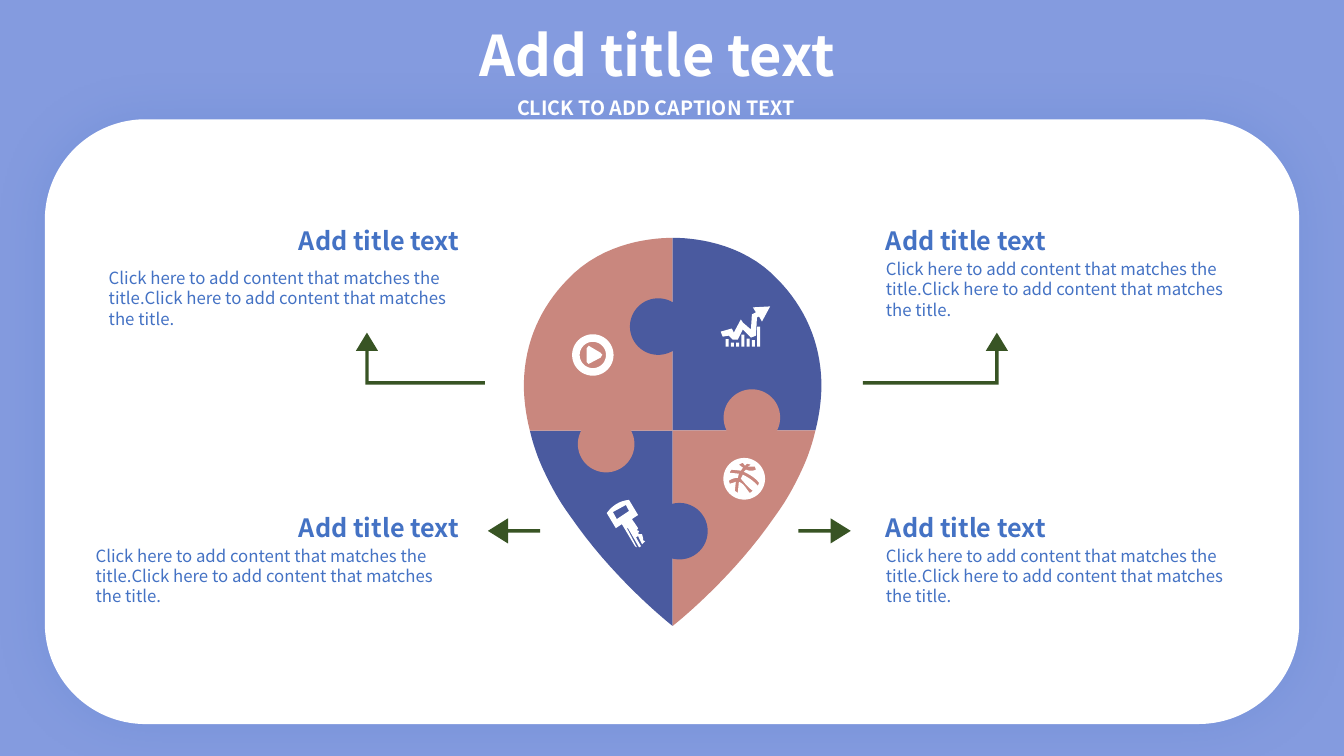
import math

from lxml import etree
from pptx import Presentation
from pptx.dml.color import RGBColor
from pptx.enum import shapes, text
from pptx.oxml import ns
from pptx.util import Pt

PERIWINKLE = RGBColor(0x84, 0x9B, 0xDF)
WHITE = RGBColor(0xFF, 0xFF, 0xFF)
BLUE = RGBColor(0x44, 0x72, 0xC4)
INDIGO = RGBColor(0x4A, 0x5A, 0x9F)
ROSE = RGBColor(0xC9, 0x87, 0x7E)
GREEN = RGBColor(0x38, 0x54, 0x24)
FONT = "Noto Sans CJK SC"
STEPS = 16


def draw_outline(contours, color):
    """Items: (x, y) point, (cx, cy, r, from, to) arc in degrees, six numbers a Bezier."""
    builder = None
    for contour in contours:
        points = []
        for item in contour:
            if len(item) == 2:
                points.append(item)
            elif len(item) == 5:
                cx, cy, r, first, last = item
                for i in range(3 * STEPS + 1):
                    angle = math.radians(first + (last - first) * i / (3 * STEPS))
                    points.append((cx + r * math.cos(angle), cy + r * math.sin(angle)))
            else:
                knots = [points[-1], item[:2], item[2:4], item[4:]]
                for i in range(1, STEPS + 1):
                    t = i / STEPS
                    weights = ((1 - t) ** 3, 3 * t * (1 - t) ** 2, 3 * t * t * (1 - t), t ** 3)
                    points.append(tuple(sum(w * k[axis] for w, k in zip(weights, knots))
                                        for axis in (0, 1)))
        points = [(Pt(x), Pt(y)) for x, y in points]
        if builder is None:
            builder = slide.shapes.build_freeform(*points[0], scale=1.0)
        else:
            builder.move_to(*points[0])
        builder.add_line_segments(points[1:], close=True)
    outline = builder.convert_to_shape()
    outline.shadow.inherit = False
    outline.fill.solid()
    outline.fill.fore_color.rgb = color
    outline.line.fill.background()


def set_text(box, words, size, color, bold, align=text.PP_ALIGN.LEFT):
    frame = box.text_frame
    frame.text = words
    frame.paragraphs[0].alignment = align
    font = frame.paragraphs[0].runs[0].font
    font.name, font.size, font.bold = FONT, Pt(size), bold
    font.color.rgb = color


prs = Presentation()
prs.slide_width, prs.slide_height = Pt(960), Pt(540)
slide = prs.slides.add_slide(prs.slide_layouts[5])
slide.background.fill.solid()
slide.background.fill.fore_color.rgb = PERIWINKLE

# White panel with a soft blue glow
panel = slide.shapes.add_shape(shapes.MSO_SHAPE.ROUNDED_RECTANGLE,
                               Pt(32), Pt(85.2), Pt(896), Pt(432))
panel.shadow.inherit = False
panel.fill.solid()
panel.fill.fore_color.rgb = WHITE
panel.line.fill.background()
effects = panel.fill._xPr.find(ns.qn("a:effectLst"))
glow = etree.SubElement(effects, ns.qn("a:outerShdw"), blurRad=str(Pt(37)), dist="0",
                        dir="0", algn="ctr", rotWithShape="0")
glow_color = etree.SubElement(glow, ns.qn("a:srgbClr"), val=str(BLUE))
etree.SubElement(glow_color, ns.qn("a:alpha"), val="22000")

# Bent arrows: tip, end of the line, direction of the line
for tip, end, side in ((262.1, 346.3, 1), (712.1, 616.3, -1)):
    draw_outline([[(tip + side * 1.2, 272.3), (tip + side * 1.2, 250.6),
                   (tip + side * 7.9, 250.6), (tip, 237.6), (tip - side * 7.9, 250.6),
                   (tip - side * 1.2, 250.6), (tip - side * 1.2, 274.7),
                   (end, 274.7), (end, 272.3)]], GREEN)

# Straight arrows: end of the line, tip, direction of the head
for end, tip, side in ((570.2, 607.7, 1), (385.9, 348.5, -1)):
    neck = tip - side * 14.4
    draw_outline([[(end, 378), (end, 380.4), (neck, 380.4), (neck, 388.2), (tip, 379.2),
                   (neck, 370.2), (neck, 378)]], GREEN)

# Puzzle pin: right-hand profile relative to the axis, mirrored for the left
AXIS, SEAM, KNOB = 480.5, 307.5, 20.2
UPPER = [(0, 169.9), (10.8, 169.9, 49, 171.4, 75.6, 200.2),
         (93.6, 218.9, 105.8, 243.4, 106.3, 274.3), (106.3, 285.1, 104.9, 295.9, 102, SEAM)]
LOWER = [(102, SEAM), (100, 316, 97, 325.5, 92.7, 334.8),
         (87.7, 345.6, 82, 356.4, 74.7, 366.5), (67.5, 376.6),
         (38.7, 416.2, 2, 445.7, 0, 447.1)]
center = (AXIS, SEAM)
for side, profile, seams, color in (
    (-1, LOWER, [center], INDIGO),
    (-1, UPPER, [(433, 317.2, KNOB, 208.7, -28.7), center], ROSE),
    (1, UPPER, [center, (470.2, 233.3, KNOB, 59.3, 300.7)], INDIGO),
    (1, LOWER, [center, (537.1, 298.3, KNOB, 152.9, 387.1)], ROSE),
):
    edge = [tuple(v if i % 2 else AXIS + side * v for i, v in enumerate(item))
            for item in profile]
    draw_outline([edge + seams], color)

lower_knob = slide.shapes.add_shape(shapes.MSO_SHAPE.OVAL, Pt(465.1), Pt(359.2),
                                    Pt(2 * KNOB), Pt(2 * KNOB))
lower_knob.shadow.inherit = False
lower_knob.fill.solid()
lower_knob.fill.fore_color.rgb = INDIGO
lower_knob.line.fill.background()

# Icons: play button, key, growth chart, ball
play = [[(423.5, 253.6, 14.8, 0, 360)], [(423.5, 253.6, 9.4, 0, 360)],
        [(419, 249), (420.5, 247), (429, 252), (430.3, 253.5), (429, 255.5),
         (420.5, 260), (419, 258.5)]]
key = [[(433.4, 366.5), (437.8, 360.7, 442.8, 357.8, 449.3, 357.1), (455.8, 367.9),
        (451.4, 370.8), (455.8, 377.3), (455, 378.7), (456.5, 379.4), (455.8, 380.9),
        (456.5, 381.6), (458.6, 381.6), (459.4, 384.5), (459.4, 385.9), (460.8, 386.6),
        (458.6, 388.8), (455.8, 383), (454.3, 383.8), (457.9, 390.2), (456.5, 391),
        (448.6, 377.3), (447.8, 377.3), (455, 391), (453.6, 390.2), (444.2, 374.4),
        (439.9, 377.3)],
       [(437.8, 365.8), (440.6, 370.8), (449.3, 365), (447.1, 360.7)]]
growth = [[(550.1, 218.9), (544.3, 229.7), (542.2, 226.1), (540.7, 226.8), (540, 239.8),
           (536.4, 241.2), (530.6, 235.4), (527, 242.6), (523.4, 242.6), (520.6, 239.8),
           (516.2, 240.5), (514.8, 236.9), (522.7, 234.7), (524.2, 237.6), (529.2, 228.2),
           (530.6, 230.4), (536.4, 235.4), (537.1, 224.6), (540, 223.2), (537.8, 219.6)]]
for i, top in enumerate((242.3, 244.8, 244.8, 239, 242, 243, 233.3)):
    left = 518.4 + 3.75 * i
    growth.append([(left, top), (left + 2, top), (left + 2, 247.7), (left, 247.7)])
ball = [[(531.6, 342, 14.9, 0, 360)],
        [(521.3, 337), (522.7, 335.5), (529.2, 336.2), (530.6, 334.1), (527.8, 331.9),
         (530.6, 330.5), (532.1, 332.6), (533.5, 331.2), (536.4, 331.9), (534.2, 333.4),
         (539.3, 333.4), (540, 335.5), (538, 336.5, 535, 336.5, 532.8, 335.5), (531.4, 337),
         (537.1, 339.8, 540, 342, 542.2, 344.9), (541.4, 347),
         (538.6, 344.2, 536.4, 342, 530.6, 339.1), (529.2, 342),
         (532, 345, 534, 348, 537.8, 350.6), (535.7, 352.1),
         (534.2, 351.4, 532, 345.6, 527.8, 344.2), (527, 352.1), (524.9, 350.6),
         (525.6, 344.2), (521.3, 345.6), (520.6, 343.4),
         (522.7, 342, 525, 341.3, 527, 341.3), (527.8, 338.4), (521.3, 337.7)]]
for icon in (play, key, growth, ball):
    draw_outline(icon, WHITE)

# Four text blocks: heading left and top, body left, top and height
LEFT, RIGHT = text.PP_ALIGN.LEFT, text.PP_ALIGN.RIGHT
for head_x, head_y, body_x, body_y, body_h, align in (
    (625.7, 157.7, 625.7, 181.4, 51.1, LEFT),
    (198.7, 157.7, 70.6, 187.9, 65.5, RIGHT),
    (198.7, 362.2, 61.2, 385.9, 51.1, RIGHT),
    (625.7, 362.2, 625.7, 385.9, 51.1, LEFT),
):
    heading = slide.shapes.add_textbox(Pt(head_x), Pt(head_y), Pt(136.1), Pt(28.8))
    heading.text_frame.word_wrap = False
    set_text(heading, "Add title text", 18, BLUE, True, align)
    body = slide.shapes.add_textbox(Pt(body_x), Pt(body_y), Pt(273.6), Pt(body_h))
    body.text_frame.word_wrap = True
    set_text(body, "Click here to add content that matches the title."
                   "Click here to add content that matches the title.", 12, BLUE, False)

# Title and caption
title = slide.shapes.title
title.left, title.top, title.width, title.height = Pt(342.7), Pt(14.4), Pt(283), Pt(48.2)
caption = slide.shapes.add_textbox(Pt(369.4), Pt(68.4), Pt(221), Pt(17.3))
for box, words, size in ((title, "Add title text", 40),
                         (caption, "CLICK TO ADD CAPTION TEXT", 14)):
    frame = box.text_frame
    frame.word_wrap = True
    frame.auto_size = text.MSO_AUTO_SIZE.NONE
    frame.vertical_anchor = text.MSO_ANCHOR.MIDDLE
    frame.margin_left = frame.margin_top = frame.margin_right = frame.margin_bottom = 0
    set_text(box, words, size, WHITE, True)

prs.save("out.pptx")
